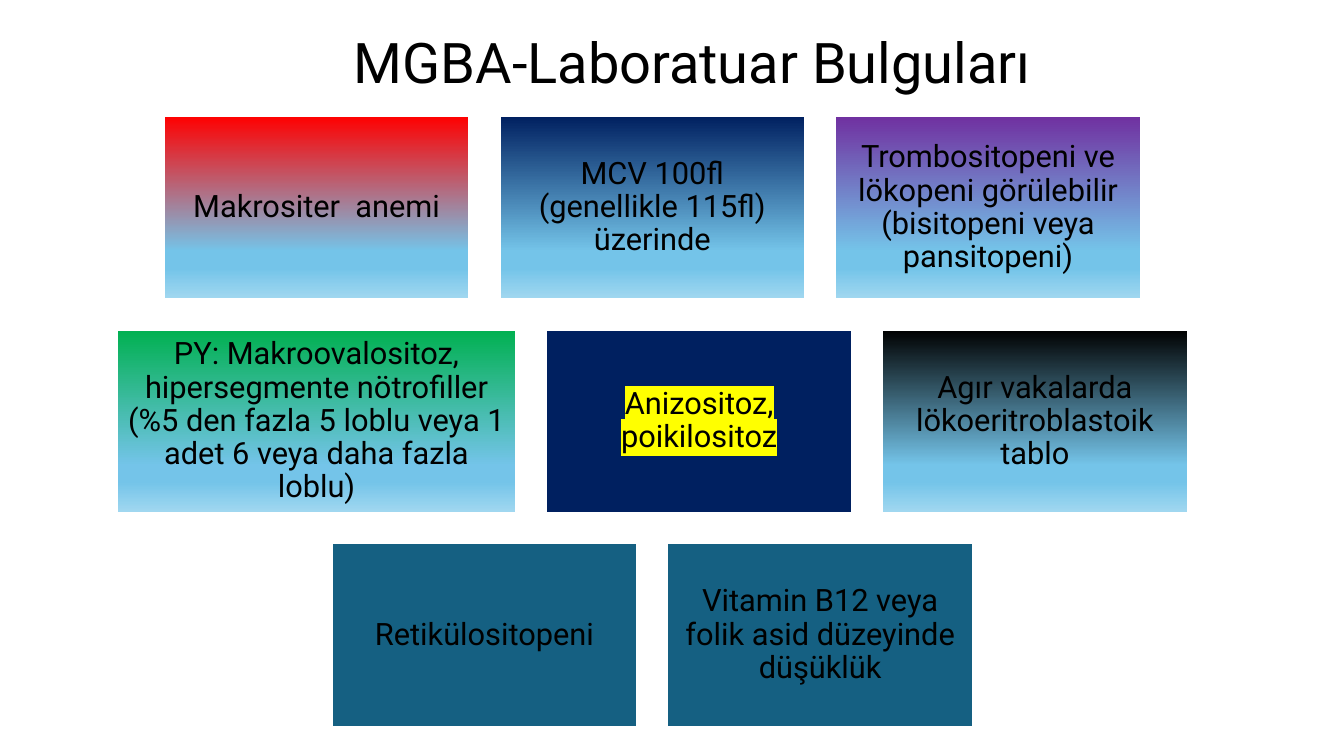
from lxml import etree
from pptx import Presentation
from pptx.dml.color import RGBColor
from pptx.enum.shapes import MSO_SHAPE
from pptx.enum.text import MSO_ANCHOR, PP_ALIGN
from pptx.oxml.ns import qn
from pptx.util import Inches, Pt

RECTANGLE = MSO_SHAPE.RECTANGLE
MIDDLE = MSO_ANCHOR.MIDDLE
LEFT, CENTER = PP_ALIGN.LEFT, PP_ALIGN.CENTER

THEME = {
    "font": "Roboto",
    "title_size": 40,
    "card_size": 22,
    "text": "000000",
    "outline": "FFFFFF",
    "highlight": "FFFF00",
    "red": "FF0000",
    "navy": "002060",
    "purple": "7030A0",
    "green": "00B050",
    "black": "000000",
    "teal": "156082",
    "fade": [(74, "74C4E9"), (83, "74C4E9"), (100, "A2D8F0")],
}

CARD_WIDTH, WIDE_CARD, CARD_HEIGHT, GAP = 3.03, 3.96, 1.82, 0.3
GRID_TOP, GRID_CENTER = 1.15, 6.47

ROWS = [
    [
        ("Makrositer  anemi", "red", True, CARD_WIDTH),
        ("MCV 100fl (genellikle 115fl) üzerinde", "navy", True, CARD_WIDTH),
        ("Trombositopeni ve lökopeni görülebilir (bisitopeni veya pansitopeni)",
         "purple", True, CARD_WIDTH),
    ],
    [
        ("PY: Makroovalositoz, hipersegmente nötrofiller (%5 den fazla 5 loblu "
         "veya 1 adet 6 veya daha fazla loblu)", "green", True, WIDE_CARD),
        ("Anizositoz, poikilositoz", "navy", False, CARD_WIDTH),
        ("Agır vakalarda lökoeritroblastoik tablo", "black", True, CARD_WIDTH),
    ],
    [
        ("Retikülositopeni", "teal", False, CARD_WIDTH),
        ("Vitamin B12 veya folik asid düzeyinde düşüklük", "teal", False, CARD_WIDTH),
    ],
]
HIGHLIGHTED = "Anizositoz, poikilositoz"


def write(shape, text, size, align):
    frame = shape.text_frame
    frame.text = text
    frame.word_wrap = True
    frame.vertical_anchor = MIDDLE
    para = frame.paragraphs[0]
    para.alignment = align
    para.line_spacing = 0.9
    span = para.runs[0]
    span.font.size = Pt(size)
    span.font.name = THEME["font"]
    span.font.color.rgb = RGBColor.from_string(THEME["text"])
    return span


def fade_down(shape, color):
    shape.fill.gradient()
    shape.fill.gradient_angle = 270
    stops = shape._element.spPr.find(qn("a:gradFill")).find(qn("a:gsLst"))
    for stop in list(stops):
        stops.remove(stop)
    for share, shade in [(0, color)] + THEME["fade"]:
        stop = etree.SubElement(stops, qn("a:gs"), pos=str(share * 1000))
        etree.SubElement(stop, qn("a:srgbClr"), val=shade)


deck = Presentation()
deck.slide_width, deck.slide_height = Inches(13.33), Inches(7.5)
page = deck.slides.add_slide(deck.slide_layouts[6])

for row_index, row in enumerate(ROWS):
    row_width = sum(card[3] for card in row) + GAP * (len(row) - 1)
    left = GRID_CENTER - row_width / 2
    top = GRID_TOP + row_index * (CARD_HEIGHT + GAP)
    for text, color_name, faded, width in row:
        card = page.shapes.add_shape(
            RECTANGLE, Inches(left), Inches(top), Inches(width), Inches(CARD_HEIGHT))
        card.shadow.inherit = False
        card.line.color.rgb = RGBColor.from_string(THEME["outline"])
        card.line.width = Pt(1.5)
        if faded:
            fade_down(card, THEME[color_name])
        else:
            card.fill.solid()
            card.fill.fore_color.rgb = RGBColor.from_string(THEME[color_name])
        frame = card.text_frame
        frame.margin_left = frame.margin_right = Inches(0.09)
        frame.margin_top = frame.margin_bottom = Inches(0.09)
        span = write(card, text, THEME["card_size"], CENTER)
        if text == HIGHLIGHTED:
            marker = etree.Element(qn("a:highlight"))
            etree.SubElement(marker, qn("a:srgbClr"), val=THEME["highlight"])
            span.font._element.find(qn("a:solidFill")).addnext(marker)
        left += width + GAP

title = page.shapes.add_textbox(Inches(3.41), Inches(0.28), Inches(8.25), Inches(0.73))
write(title, "MGBA-Laboratuar Bulguları", THEME["title_size"], LEFT)

deck.save("out.pptx")
